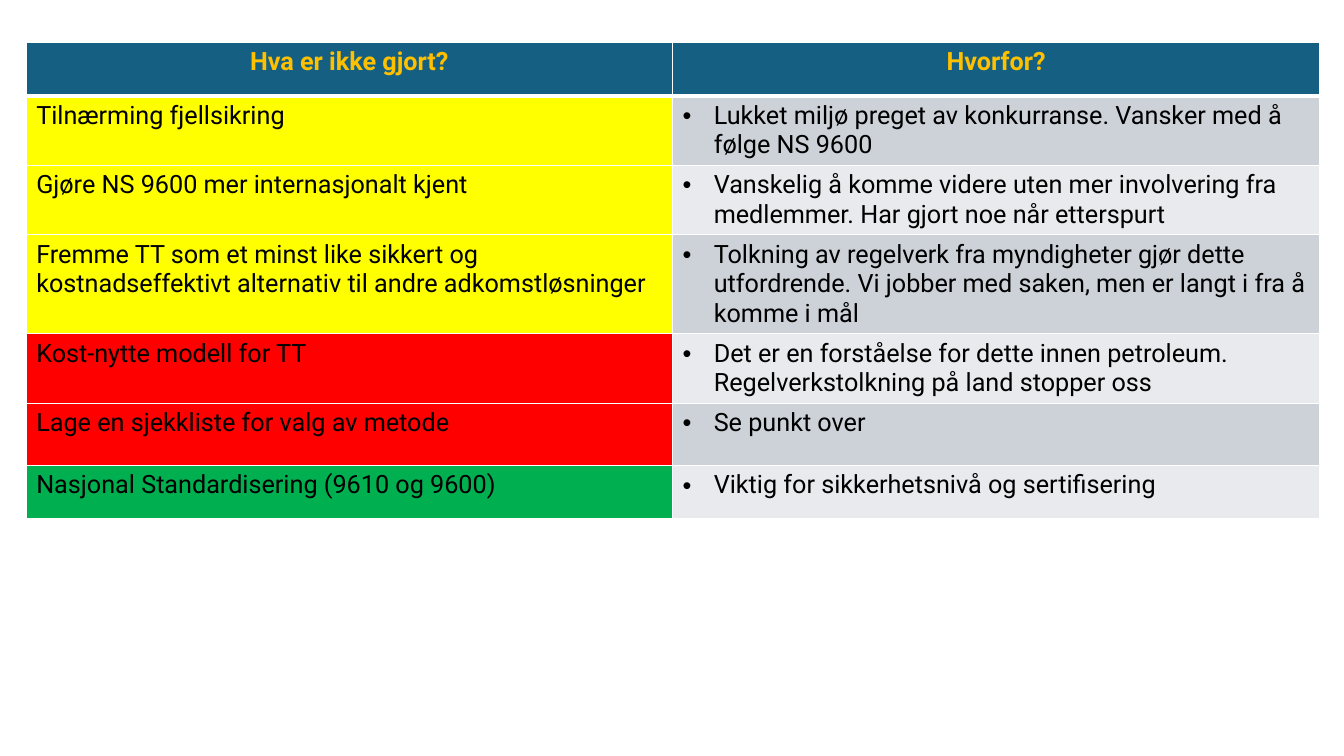
from lxml import etree
from pptx import Presentation
from pptx import util as u
from pptx.dml.color import RGBColor
from pptx.enum import text
from pptx.oxml import ns

COLORS = {
    "header": "156082",
    "heading": "FFC000",
    "ink": "000000",
    "border": "FFFFFF",
    "started": "FFFF00",
    "stopped": "FF0000",
    "done": "00B050",
    "odd": "CCD2D8",
    "even": "E8EAED",
}

HEADINGS = ("Hva er ikke gjort?", "Hvorfor?")

TASKS = [
    ("started", 0.69, "Tilnærming fjellsikring",
     "Lukket miljø preget av konkurranse. Vansker med å følge NS 9600"),
    ("started", 0.69, "Gjøre NS 9600 mer internasjonalt kjent",
     "Vanskelig å komme videre uten mer involvering fra medlemmer. "
     "Har gjort noe når etterspurt"),
    ("started", 0.98, "Fremme TT som et minst like sikkert og kostnadseffektivt "
     "alternativ til andre adkomstløsninger",
     "Tolkning av regelverk fra myndigheter gjør dette utfordrende. "
     "Vi jobber med saken, men er langt i fra å komme i mål"),
    ("stopped", 0.69, "Kost-nytte modell for TT",
     "Det er en forståelse for dette innen petroleum. "
     "Regelverkstolkning på land stopper oss"),
    ("stopped", 0.62, "Lage en sjekkliste for valg av metode", "Se punkt over"),
    ("done", 0.53, "Nasjonal Standardisering (9610 og 9600)",
     "Viktig for sikkerhetsnivå og sertifisering"),
]


class StatusSlide:
    font = "Roboto"
    size = u.Pt(18)
    indent = u.Inches(0.31)
    header_height = 0.53

    def __init__(self, deck):
        self.page = deck.slides.add_slide(deck.slide_layouts[6])

    def color(self, name):
        return RGBColor.from_string(COLORS[name])

    def borders(self, cell, bottom, top):
        properties = cell._tc.get_or_add_tcPr()
        for side, points in (("L", 1), ("R", 1), ("T", top), ("B", bottom)):
            line = etree.SubElement(properties, ns.qn(f"a:ln{side}"), w=str(u.Pt(points)))
            fill = etree.SubElement(line, ns.qn("a:solidFill"))
            etree.SubElement(fill, ns.qn("a:srgbClr"), val=COLORS["border"])

    def bullet(self, paragraph):
        properties = paragraph._p.get_or_add_pPr()
        properties.set("marL", str(self.indent))
        properties.set("indent", str(-self.indent))
        etree.SubElement(properties, ns.qn("a:buFont"), typeface="Arial")
        etree.SubElement(properties, ns.qn("a:buChar"), char="•")

    def cell(self, cell, words, fill, ink="ink", heading=False, bulleted=False, top=1):
        self.borders(cell, 3 if heading else 1, top)
        cell.fill.solid()
        cell.fill.fore_color.rgb = self.color(fill)
        paragraph = cell.text_frame.paragraphs[0]
        if heading:
            paragraph.alignment = text.PP_ALIGN.CENTER
        if bulleted:
            self.bullet(paragraph)
        span = paragraph.add_run()
        span.text = words
        span.font.name = self.font
        span.font.size = self.size
        span.font.bold = heading
        span.font.color.rgb = self.color(ink)

    def table(self, left, top, widths, headings, tasks):
        heights = [self.header_height] + [task[1] for task in tasks]
        frame = self.page.shapes.add_table(
            len(heights), len(widths), u.Inches(left), u.Inches(top),
            u.Inches(sum(widths)), u.Inches(sum(heights)))
        table = frame.table
        table.horz_banding = False
        for column, width in zip(table.columns, widths):
            column.width = u.Inches(width)
        for row, height in zip(table.rows, heights):
            row.height = u.Inches(height)
        for index, heading in enumerate(headings):
            self.cell(table.cell(0, index), heading, "header", "heading", heading=True)
        for index, (status, _, task, reason) in enumerate(tasks, 1):
            top_line = 3 if index == 1 else 1
            band = "odd" if index % 2 else "even"
            self.cell(table.cell(index, 0), task, status, top=top_line)
            self.cell(table.cell(index, 1), reason, band, bulleted=True, top=top_line)


def main():
    deck = Presentation()
    deck.slide_width = u.Inches(13.33)
    deck.slide_height = u.Inches(7.5)
    StatusSlide(deck).table(0.26, 0.42, (6.41, 6.42), HEADINGS, TASKS)
    deck.save("out.pptx")


if __name__ == "__main__":
    main()
